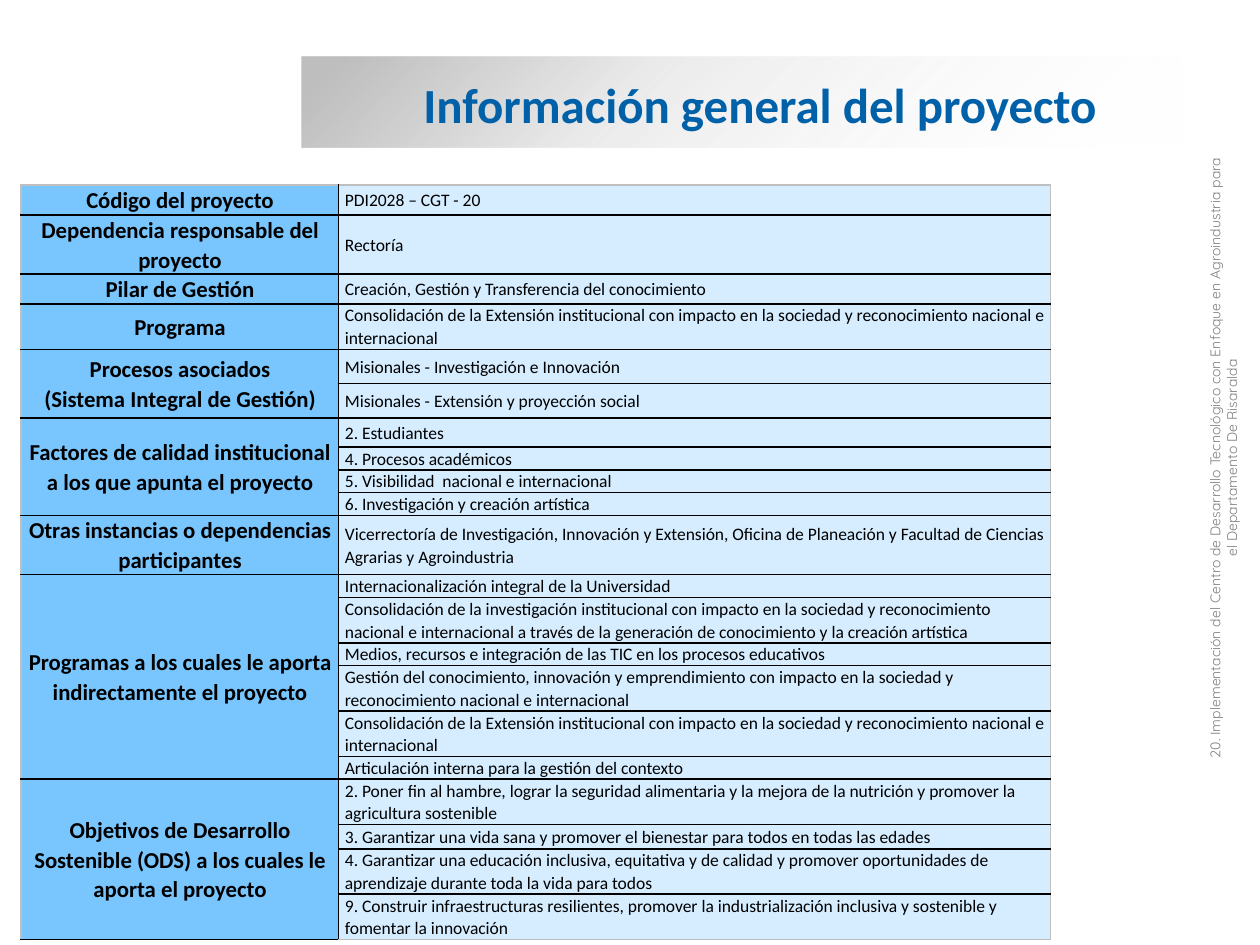
from lxml.etree import SubElement as Sub
from pptx import Presentation
from pptx.dml.color import RGBColor
from pptx.enum.shapes import MSO_SHAPE as Shape
from pptx.enum.text import MSO_ANCHOR as Anchor, MSO_AUTO_SIZE as Auto, PP_ALIGN as Align
from pptx.oxml.ns import qn
from pptx.util import Pt

# Content: label, then its values with row heights
TITLE = "Información general del proyecto"
SIDE = ("20. Implementación del Centro de Desarrollo Tecnológico con Enfoque en "
        "Agroindustria para el Departamento De Risaralda")
ONE, TWO = 12.85, 25.7
GROUPS = [
    ("Código del proyecto", [("PDI2028 – CGT - 20", 16.8)]),
    ("Dependencia responsable del proyecto", [("Rectoría", 33.4)]),
    ("Pilar de Gestión", [("Creación, Gestión y Transferencia del conocimiento", 16.8)]),
    ("Programa", [
        ("Consolidación de la Extensión institucional con impacto en la sociedad y "
         "reconocimiento nacional e internacional", TWO)]),
    ("Procesos asociados\n(Sistema Integral de Gestión)", [
        ("Misionales - Investigación e Innovación", 19.7),
        ("Misionales - Extensión y proyección social", 19.7)]),
    ("Factores de calidad institucional a los que apunta el proyecto", [
        ("2. Estudiantes", 16.6),
        ("4. Procesos académicos", ONE),
        ("5. Visibilidad  nacional e internacional", ONE),
        ("6. Investigación y creación artística", ONE)]),
    ("Otras instancias o dependencias participantes", [
        ("Vicerrectoría de Investigación, Innovación y Extensión, Oficina de Planeación "
         "y Facultad de Ciencias Agrarias y Agroindustria", 33.4)]),
    ("Programas a los cuales le aporta indirectamente el proyecto", [
        ("Internacionalización integral de la Universidad", ONE),
        ("Consolidación de la investigación institucional con impacto en la sociedad y "
         "reconocimiento nacional e internacional a través de la generación de "
         "conocimiento y la creación artística", TWO),
        ("Medios, recursos e integración de las TIC en los procesos educativos", ONE),
        ("Gestión del conocimiento, innovación y emprendimiento con impacto en la "
         "sociedad y reconocimiento nacional e internacional", TWO),
        ("Consolidación de la Extensión institucional con impacto en la sociedad y "
         "reconocimiento nacional e internacional", TWO),
        ("Articulación interna para la gestión del contexto", ONE)]),
    ("Objetivos de Desarrollo Sostenible (ODS) a los cuales le aporta el proyecto", [
        ("2. Poner fin al hambre, lograr la seguridad alimentaria y la mejora de la "
         "nutrición y promover la agricultura sostenible", TWO),
        ("3. Garantizar una vida sana y promover el bienestar para todos en todas las "
         "edades", 13.9),
        ("4. Garantizar una educación inclusiva, equitativa y de calidad y promover "
         "oportunidades de aprendizaje durante toda la vida para todos", TWO),
        ("9. Construir infraestructuras resilientes, promover la industrialización "
         "inclusiva y sostenible y fomentar la innovación", TWO)]),
]
COLS = [181.4, 406.8]
FADE = [(5, "BFBFBF", 100), (37, "BFBFBF", 31), (100, "FFFFFF", 0)]


def color(code):
    return RGBColor.from_string(code)


def write(para, text, size, code, bold=False, font="Calibri", align=Align.LEFT):
    para.alignment = align
    for i, line in enumerate(text.split("\n")):
        if i:
            para.add_line_break()
        run = para.add_run()
        run.text = line
        run.font.size, run.font.bold, run.font.name = Pt(size), bold, font
        run.font.color.rgb = color(code)


def edge(cell, side, code):
    line = Sub(cell._tc.get_or_add_tcPr(), qn("a:ln" + side), w=str(Pt(1)))
    Sub(Sub(line, qn("a:solidFill")), qn("a:srgbClr"), val=code)


def style(cell, back, pad, outer):
    cell.margin_left = cell.margin_right = Pt(pad)
    cell.margin_top = cell.margin_bottom = 0
    cell.vertical_anchor = Anchor.MIDDLE
    for side in "LRTB":
        edge(cell, side, "BFBFBF" if side in outer else "000000")
    cell.fill.solid()
    cell.fill.fore_color.rgb = color(back)


def fade(shape):
    shape.fill.gradient()
    grad = shape.element.spPr.find(qn("a:gradFill"))
    for child in list(grad):
        grad.remove(child)
    stops = Sub(grad, qn("a:gsLst"))
    for pos, code, alpha in FADE:
        stop = Sub(stops, qn("a:gs"), pos=str(pos * 1000))
        tint = Sub(stop, qn("a:srgbClr"), val=code)
        Sub(tint, qn("a:alpha"), val=str(alpha * 1000))
    Sub(grad, qn("a:lin"), ang=str(45 * 60000), scaled="0")


deck = Presentation()
deck.slide_width, deck.slide_height = Pt(720), Pt(540)
slide = deck.slides.add_slide(deck.slide_layouts[5])
shapes = slide.shapes

# Title over a fading band
band = shapes.add_shape(Shape.RECTANGLE, Pt(172.5), Pt(32.3), Pt(502.5), Pt(52.2))
band.shadow.inherit = False
band.line.fill.background()
fade(band)
title = shapes.title
title.element.addprevious(band.element)
title.left, title.top, title.width, title.height = Pt(234.7), Pt(39), Pt(446.4), Pt(41)
frame = title.text_frame
frame.auto_size, frame.vertical_anchor = Auto.NONE, Anchor.MIDDLE
write(frame.paragraphs[0], TITLE, 28, "0060A8", bold=True)

# Project table
rows = [row for _, values in GROUPS for row in values]
table = shapes.add_table(len(rows), 2, Pt(12.1), Pt(105.8), Pt(sum(COLS)),
                         Pt(sum(high for _, high in rows))).table
table.first_row = table.horz_banding = False
for col, wide in zip(table.columns, COLS):
    col.width = Pt(wide)
for i, (text, high) in enumerate(rows):
    table.rows[i].height = Pt(high)
    rim = "T" * (i == 0) + "B" * (i == len(rows) - 1)
    style(table.cell(i, 0), "79C6FF", 3, "L" + rim)
    style(table.cell(i, 1), "D5EDFF", 3.6, "R" + rim)
    para = table.cell(i, 1).text_frame.paragraphs[0]
    para.line_spacing = 1.07
    write(para, text, 10, "000000")
top = 0
for label, values in GROUPS:
    head = table.cell(top, 0)
    if len(values) > 1:
        head.merge(table.cell(top + len(values) - 1, 0))
    para = head.text_frame.paragraphs[0]
    para.line_spacing = 1.07
    write(para, label, 13, "000000", bold=True, align=Align.CENTER)
    top += len(values)

# Project name up the right side
side = shapes.add_textbox(Pt(517.7), Pt(248.4), Pt(362.9), Pt(26.6))
side.rotation = 270
side.text_frame.word_wrap = True
write(side.text_frame.paragraphs[0], SIDE, 8, "808080", font="Quicksand",
      align=Align.CENTER)

deck.save("out.pptx")
